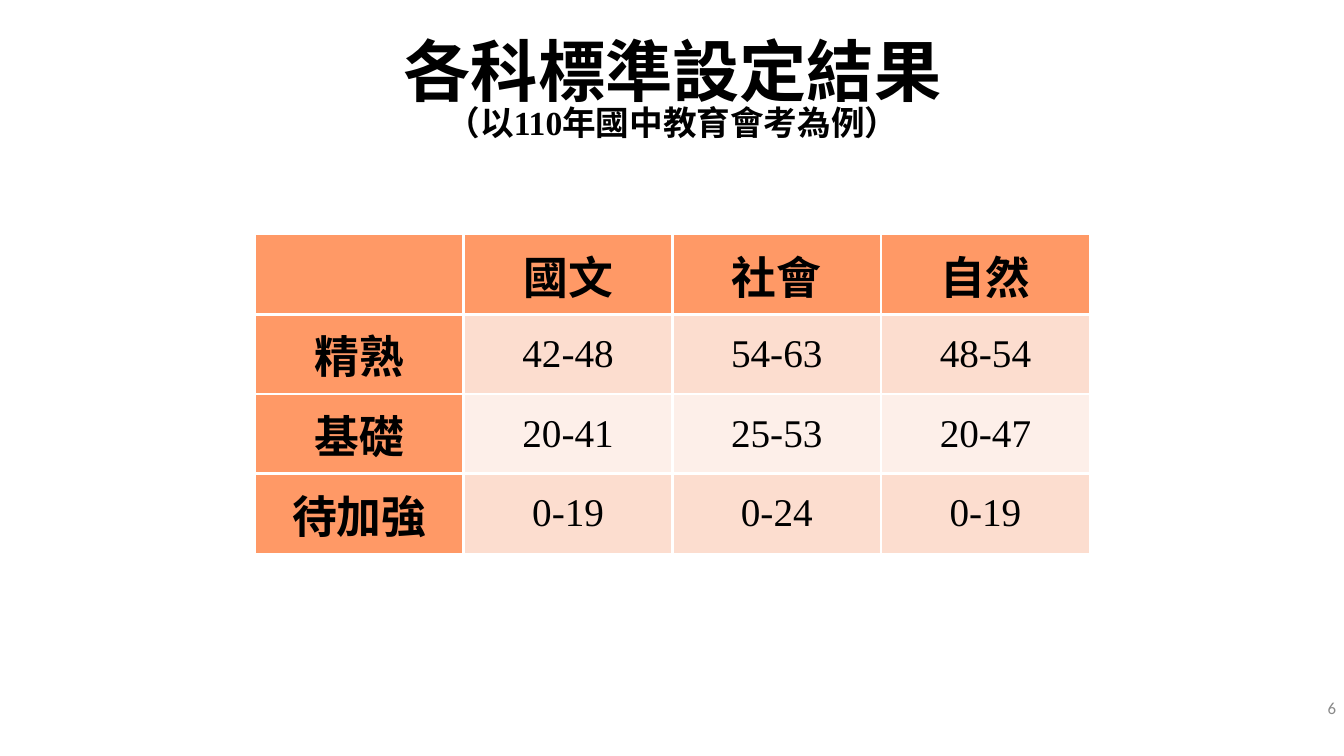
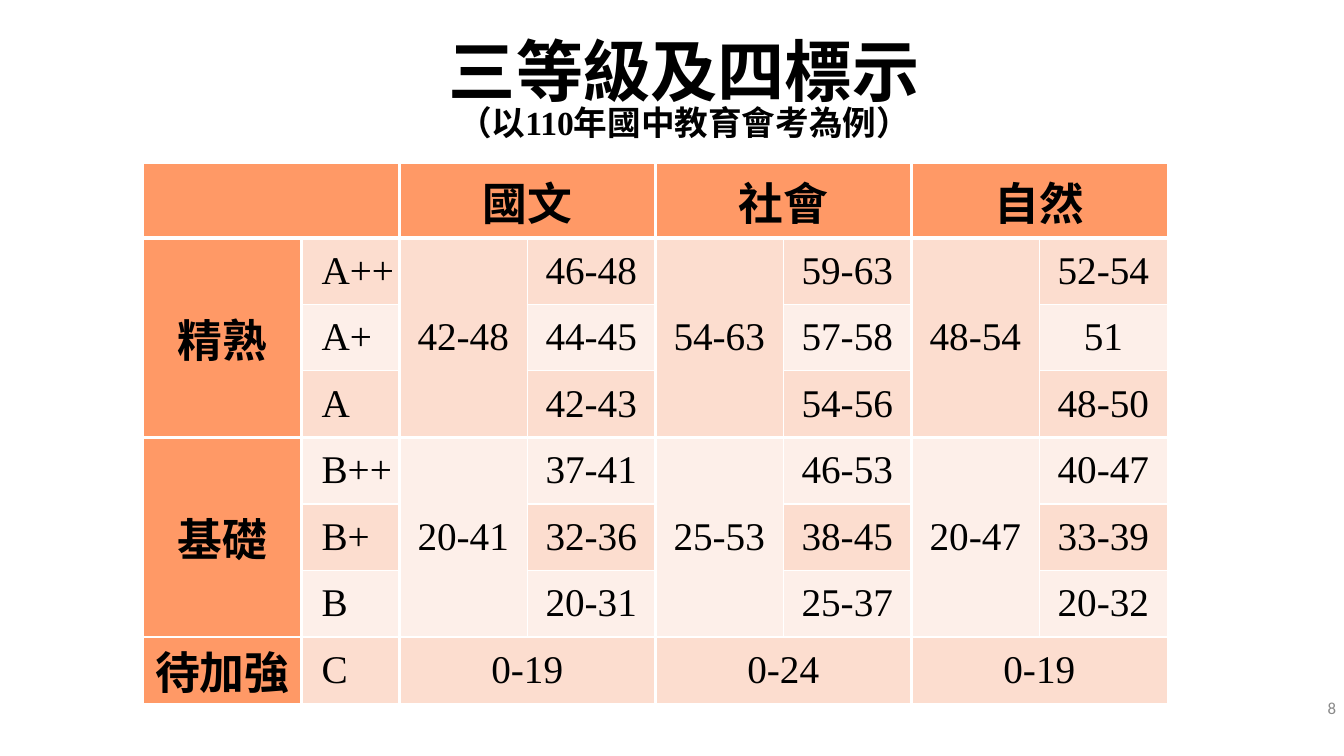
from lxml import etree
from pptx import Presentation
from pptx import util as u
from pptx.dml.color import RGBColor
from pptx.enum import text
from pptx.oxml import ns

ORANGE, PEACH, CREAM = "FF9966", "FCDDCF", "FDEFE9"
BLACK, GRAY, WHITE = "000000", "898989", "FFFFFF"
SUBTITLE = "（以110年國中教育會考為例）"
THIN, MEDIUM, THICK = 1, 2.25, 3


def format_text(paragraph, size, font_name, color, bold=False, alignment=text.PP_ALIGN.CENTER):
    paragraph.alignment = alignment
    for run in paragraph.runs:
        run.font.size = u.Pt(size)
        run.font.bold = bold
        run.font.color.rgb = RGBColor.from_string(color)
        run.font.name = font_name
        east_asian = etree.SubElement(run.font._element, ns.qn("a:ea"))
        east_asian.set("typeface", "Noto Sans CJK SC")


def add_border(cell, side, width):
    line = etree.SubElement(cell._tc.get_or_add_tcPr(), ns.qn(f"a:ln{side}"), w=str(u.Pt(width)))
    fill = etree.SubElement(line, ns.qn("a:solidFill"))
    etree.SubElement(fill, ns.qn("a:srgbClr"), val=WHITE)


subjects = ["國文", "社會", "自然"]
level_rows = [
    ["", *subjects],
    ["精熟", "42-48", "54-63", "48-54"],
    ["基礎", "20-41", "25-53", "20-47"],
    ["待加強", "0-19", "0-24", "0-19"],
]
grade_rows = [
    ["", "", "國文", "", "社會", "", "自然", ""],
    ["精熟", "A++", "42-48", "46-48", "54-63", "59-63", "48-54", "52-54"],
    ["", "A+", "", "44-45", "", "57-58", "", "51"],
    ["", "A", "", "42-43", "", "54-56", "", "48-50"],
    ["基礎", "B++", "20-41", "37-41", "25-53", "46-53", "20-47", "40-47"],
    ["", "B+", "", "32-36", "", "38-45", "", "33-39"],
    ["", "B", "", "20-31", "", "25-37", "", "20-32"],
    ["待加強", "C", "0-19", "", "0-24", "", "0-19", ""],
]
grade_merges = [(0, column, 0, column + 1) for column in (0, 2, 4, 6)]
grade_merges += [(row, column, row + 2, column) for row in (1, 4) for column in (0, 2, 4, 6)]
grade_merges += [(7, column, 7, column + 1) for column in (2, 4, 6)]

slides = [
    {
        "title": "各科標準設定結果", "title_left": 0.67, "title_width": 12, "number": "6",
        "left": 2.53, "top": 2.33, "columns": [2.07] * 4, "heights": [0.79] * 4,
        "rows": level_rows, "merges": [], "grade_column": None,
        "row_lines": [THIN, THICK, MEDIUM, MEDIUM, THIN],
        "column_lines": [THIN, MEDIUM, MEDIUM, MEDIUM, THIN],
    },
    {
        "title": "三等級及四標示", "title_left": 2.17, "title_width": 9.23, "number": "8",
        "left": 1.42, "top": 1.62, "columns": [1.57, 0.97] + [1.27] * 6, "heights": [0.74] + [0.66] * 7,
        "rows": grade_rows, "merges": grade_merges, "grade_column": 1,
        "row_lines": [THIN, THICK, THIN, THIN, MEDIUM, THIN, THIN, MEDIUM, THIN],
        "column_lines": [THIN, MEDIUM, MEDIUM, THIN, MEDIUM, THIN, MEDIUM, THIN, THIN],
    },
]

presentation = Presentation()
presentation.slide_width = u.Inches(13.33)
presentation.slide_height = u.Inches(7.5)

for content in slides:
    slide = presentation.slides.add_slide(presentation.slide_layouts[6])

    title = slide.shapes.add_textbox(
        u.Inches(content["title_left"]), u.Inches(0.3), u.Inches(content["title_width"]), u.Inches(1.25)
    )
    title.text_frame.word_wrap = True
    title.text_frame.vertical_anchor = text.MSO_ANCHOR.MIDDLE
    title.text_frame.text = f"{content['title']}\n{SUBTITLE}"
    for paragraph, size in zip(title.text_frame.paragraphs, (48, 24)):
        format_text(paragraph, size, "Times New Roman", BLACK, bold=True)
        paragraph.line_spacing = 0.8

    rows, columns, heights = content["rows"], content["columns"], content["heights"]
    table = slide.shapes.add_table(
        len(rows), len(columns), u.Inches(content["left"]), u.Inches(content["top"]),
        u.Inches(sum(columns)), u.Inches(sum(heights)),
    ).table
    for column, width in zip(table.columns, columns):
        column.width = u.Inches(width)
    for row, height in zip(table.rows, heights):
        row.height = u.Inches(height)
    for first_row, first_column, last_row, last_column in content["merges"]:
        table.cell(first_row, first_column).merge(table.cell(last_row, last_column))

    for row_index, values in enumerate(rows):
        for column_index, value in enumerate(values):
            cell = table.cell(row_index, column_index)
            if cell.is_spanned:
                continue
            is_header = row_index == 0 or column_index == 0
            is_grade = column_index == content["grade_column"]
            bottom = row_index + (cell.span_height if cell.is_merge_origin else 1)
            right = column_index + (cell.span_width if cell.is_merge_origin else 1)
            add_border(cell, "L", content["column_lines"][column_index])
            add_border(cell, "R", content["column_lines"][right])
            add_border(cell, "T", content["row_lines"][row_index])
            add_border(cell, "B", content["row_lines"][bottom])
            cell.fill.solid()
            color = ORANGE if is_header else PEACH if row_index % 2 else CREAM
            cell.fill.fore_color.rgb = RGBColor.from_string(color)
            cell.vertical_anchor = text.MSO_ANCHOR.MIDDLE
            cell.margin_left = u.Inches(0.2 if is_grade else 0.02)
            cell.margin_right = u.Inches(0.02)
            cell.margin_top = cell.margin_bottom = 0
            cell.text_frame.text = value
            format_text(
                cell.text_frame.paragraphs[0],
                32 if is_header else 28,
                "Arial" if is_header else "Times New Roman",
                BLACK,
                bold=is_header,
                alignment=text.PP_ALIGN.LEFT if is_grade else text.PP_ALIGN.CENTER,
            )

    number = slide.shapes.add_textbox(u.Inches(10.24), u.Inches(6.82), u.Inches(3.11), u.Inches(0.4))
    number.text_frame.word_wrap = True
    number.text_frame.vertical_anchor = text.MSO_ANCHOR.MIDDLE
    number.text_frame.text = content["number"]
    format_text(number.text_frame.paragraphs[0], 12, "Calibri", GRAY, alignment=text.PP_ALIGN.RIGHT)

presentation.save("out.pptx")
